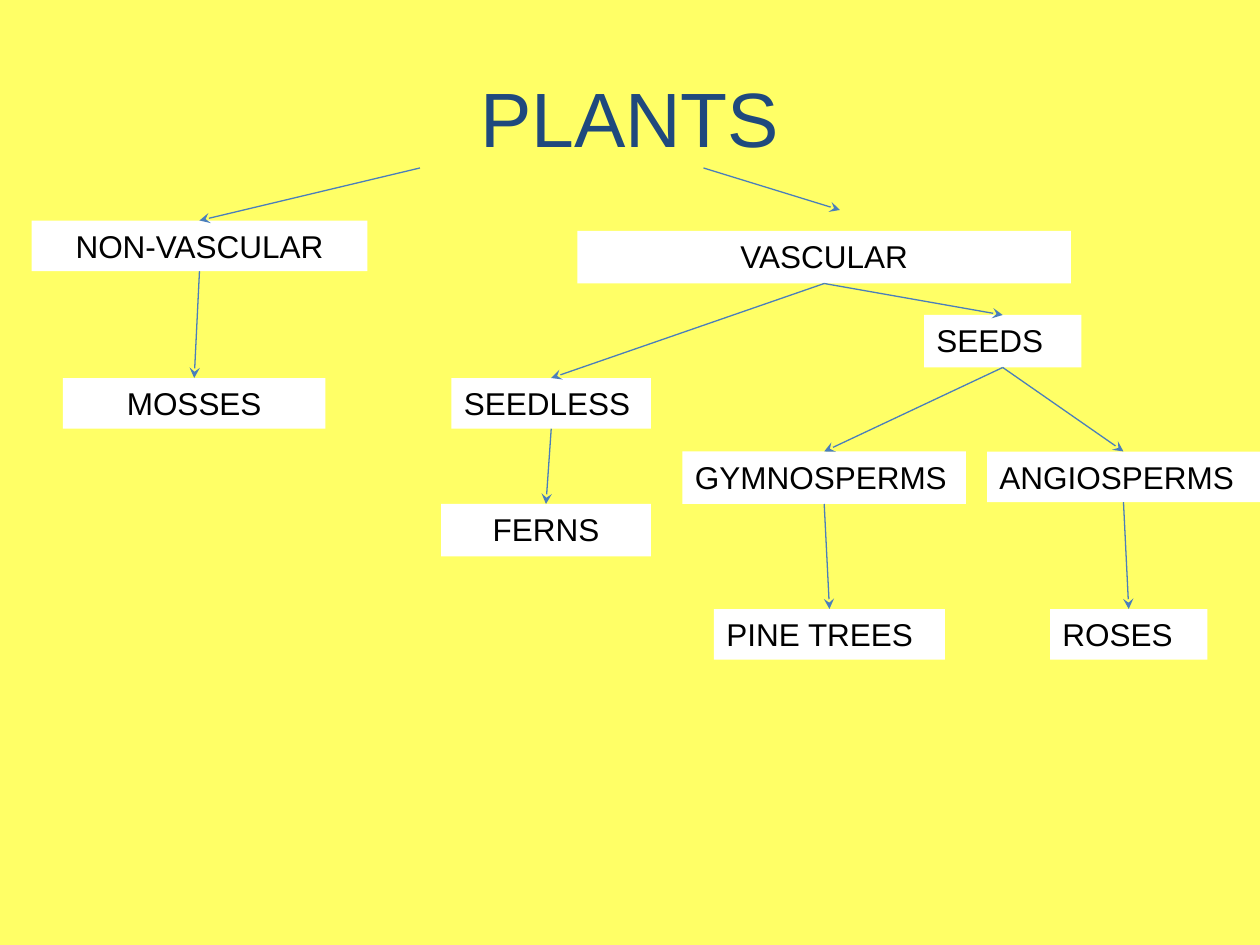
import pptx
import pptx.util
import pptx.dml.color
import pptx.enum.shapes
import pptx.enum.text
import pptx.oxml
import pptx.oxml.ns

Pt = pptx.util.Pt
RGBColor = pptx.dml.color.RGBColor
ALIGN = pptx.enum.text.PP_ALIGN
ANCHOR = pptx.enum.text.MSO_ANCHOR
AUTO_SIZE = pptx.enum.text.MSO_AUTO_SIZE

YELLOW = RGBColor(0xFF, 0xFF, 0x66)
WHITE = RGBColor(0xFF, 0xFF, 0xFF)
BLACK = RGBColor(0, 0, 0)
NAVY = RGBColor(0x1F, 0x49, 0x7D)
BLUE = RGBColor(0x4A, 0x7E, 0xBB)

BOTTOM, TOP = 2, 0

GROUPS = {
    "NON-VASCULAR": (0, 30, 192, 29, ALIGN.CENTER),
    "VASCULAR": (312, 36, 282, 30, ALIGN.CENTER),
    "SEEDS": (510, 84, 90, 30, ALIGN.LEFT),
    "MOSSES": (18, 120, 150, 29, ALIGN.CENTER),
    "SEEDLESS": (240, 120, 114, 29, ALIGN.LEFT),
    "GYMNOSPERMS": (372, 162, 162, 30, ALIGN.LEFT),
    "ANGIOSPERMS": (546, 162, 156, 29, ALIGN.LEFT),
    "FERNS": (234, 192, 120, 30, ALIGN.CENTER),
    "PINE TREES": (390, 252, 132, 29, ALIGN.LEFT),
    "ROSES": (582, 252, 90, 29, ALIGN.LEFT),
}

BRANCHES = [
    ("NON-VASCULAR", "MOSSES"),
    ("VASCULAR", "SEEDLESS"),
    ("VASCULAR", "SEEDS"),
    ("SEEDLESS", "FERNS"),
    ("SEEDS", "GYMNOSPERMS"),
    ("SEEDS", "ANGIOSPERMS"),
    ("GYMNOSPERMS", "PINE TREES"),
    ("ANGIOSPERMS", "ROSES"),
]


def add_text(s, text, left, top, width, height, *, size=18, color=BLACK,
             align=ALIGN.LEFT, anchor=ANCHOR.TOP, fill=None, grow=False):
    sp = s.shapes.add_textbox(Pt(left), Pt(top), Pt(width), Pt(height))
    if fill is not None:
        sp.fill.solid()
        sp.fill.fore_color.rgb = fill
    tf = sp.text_frame
    tf.word_wrap = True
    tf.auto_size = AUTO_SIZE.SHAPE_TO_FIT_TEXT if grow else AUTO_SIZE.NONE
    tf.vertical_anchor = anchor
    p = tf.paragraphs[0]
    p.alignment = align
    r = p.add_run()
    r.text = text
    r.font.name = "Arial"
    r.font.size = Pt(size)
    r.font.color.rgb = color
    return sp


def add_arrow(s, x1, y1, x2, y2):
    c = s.shapes.add_connector(pptx.enum.shapes.MSO_CONNECTOR.STRAIGHT,
                               Pt(x1), Pt(y1), Pt(x2), Pt(y2))
    c.line.color.rgb = BLUE
    c.line.width = Pt(0.75)
    tail = pptx.oxml.parse_xml(
        f'<a:tailEnd {pptx.oxml.ns.nsdecls("a")} type="stealth"/>')
    c.line._get_or_add_ln().append(tail)
    c._element.spPr.append(pptx.oxml.parse_xml(
        f'<a:effectLst {pptx.oxml.ns.nsdecls("a")}/>'))
    return c


def add_title(s, left, top, width, height):
    add_text(s, "PLANTS", left, top, width, height, size=44, color=NAVY,
             align=ALIGN.CENTER, anchor=ANCHOR.MIDDLE)


def add_tree(s, left, top):
    boxes = {
        name: add_text(s, name, left + x, top + y, w, h,
                       align=align, fill=WHITE, grow=True)
        for name, (x, y, w, h, align) in GROUPS.items()
    }
    c = add_arrow(s, left + 222, top, left + 96, top + 30)
    c.end_connect(boxes["NON-VASCULAR"], TOP)
    add_arrow(s, left + 384, top, left + 462, top + 24)
    for parent, child in BRANCHES:
        c = add_arrow(s, left, top, left, top)
        c.begin_connect(boxes[parent], BOTTOM)
        c.end_connect(boxes[child], TOP)


def main():
    prs = pptx.Presentation()
    prs.slide_width, prs.slide_height = Pt(720), Pt(540)
    s = prs.slides.add_slide(prs.slide_layouts[6])
    s.background.fill.solid()
    s.background.fill.fore_color.rgb = YELLOW
    add_title(s, 36, 21.6, 648, 90)
    add_tree(s, 18, 96)
    prs.save("out.pptx")


if __name__ == "__main__":
    main()
